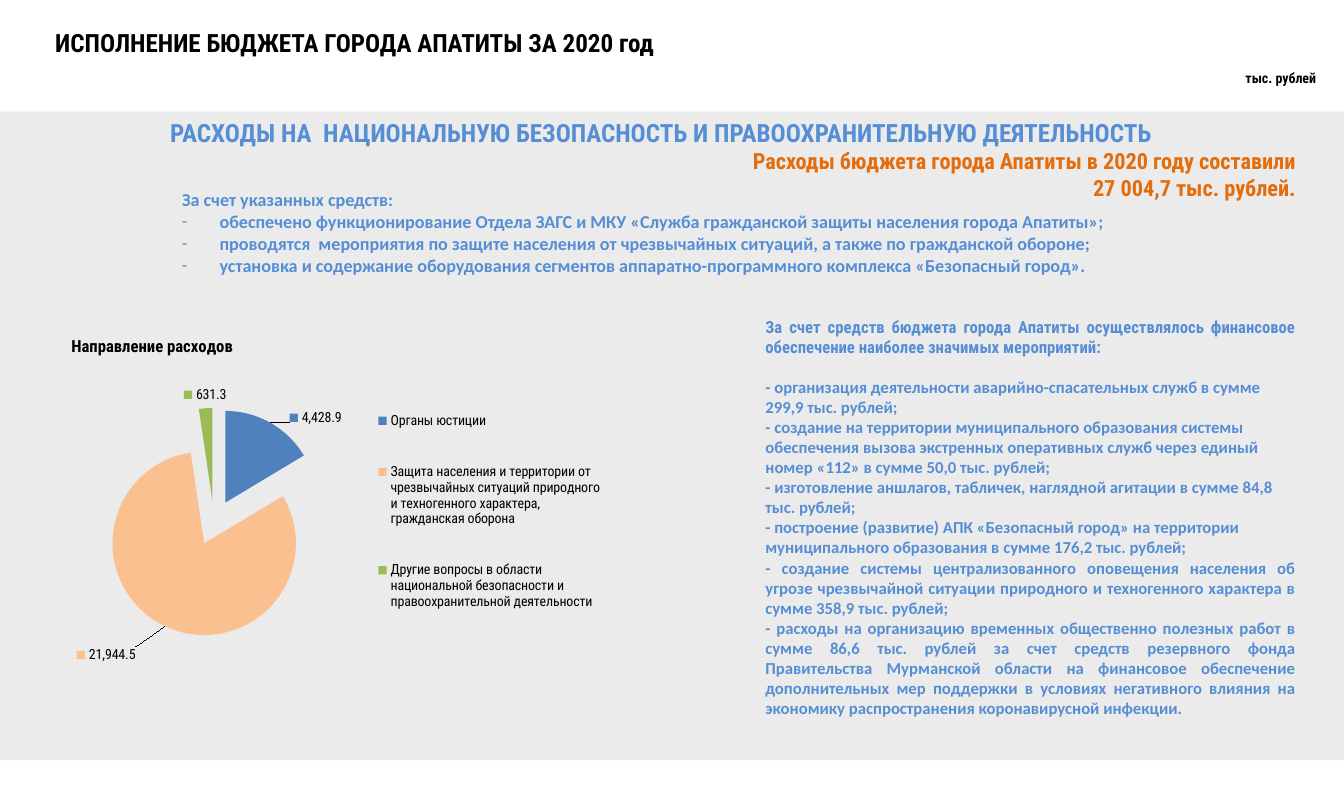
from dataclasses import dataclass
from lxml.etree import SubElement
from pptx import Presentation
from pptx.chart.data import CategoryChartData
from pptx.dml.color import RGBColor as RGB
from pptx.enum.chart import XL_CHART_TYPE as CT, XL_LABEL_POSITION as LP, XL_LEGEND_POSITION as LEG
from pptx.enum.shapes import MSO_SHAPE as SHAPE
from pptx.enum.text import MSO_ANCHOR as ANCHOR, PP_ALIGN as AL
from pptx.oxml import parse_xml
from pptx.oxml.ns import qn
from pptx.util import Pt


@dataclass(frozen=True)
class Theme:
    """Colours, fonts and type sizes of the slide."""
    black: str = "000000"
    blue: str = "558ED5"
    orange: str = "E46C0A"
    panel: str = "EBEBEB"
    slices: tuple = ("4F81BD", "FAC090", "9BBB59")
    head: str = "Roboto Condensed"
    body: str = "Calibri"
    title: int = 18
    total: int = 16
    uses: int = 13
    text: int = 12
    small: int = 10


T = Theme()
CHART_NS = "http://schemas.openxmlformats.org/drawingml/2006/chart"
NUMBER = "#,##0.0"
EXPLOSION = 25

USES = [
    "обеспечено функционирование Отдела ЗАГС и МКУ «Служба гражданской защиты населения города Апатиты»;",
    "проводятся  мероприятия по защите населения от чрезвычайных ситуаций, а также по гражданской обороне;",
    "установка и содержание оборудования сегментов аппаратно-программного комплекса «Безопасный город».",
]
SPENDING = [
    ("Органы юстиции", 4428.9),
    ("Защита населения и территории от чрезвычайных ситуаций природного и техногенного характера, "
     "гражданская оборона", 21944.5),
    ("Другие вопросы в области национальной безопасности и правоохранительной деятельности", 631.3),
]
MEASURES = [
    ("- организация деятельности аварийно-спасательных служб в сумме 299,9 тыс. рублей;", AL.LEFT),
    ("- создание на территории муниципального образования системы обеспечения вызова экстренных "
     "оперативных служб через единый номер «112» в сумме 50,0 тыс. рублей;", AL.LEFT),
    ("- изготовление аншлагов, табличек, наглядной агитации в сумме 84,8 тыс. рублей;", AL.LEFT),
    ("- построение (развитие) АПК «Безопасный город» на территории муниципального образования "
     "в сумме 176,2 тыс. рублей;", AL.LEFT),
    ("- создание системы централизованного оповещения населения об угрозе чрезвычайной ситуации "
     "природного и техногенного характера в сумме 358,9 тыс. рублей;", AL.JUSTIFY),
    ("- расходы на организацию временных общественно полезных работ в сумме 86,6 тыс. рублей за счет "
     "средств резервного фонда Правительства Мурманской области на финансовое обеспечение "
     "дополнительных мер поддержки в условиях негативного влияния на экономику распространения "
     "коронавирусной инфекции.", AL.JUSTIFY),
]


def style(font, name, size, color, bold=True):
    """Set the face, size, colour and weight of a font."""
    font.name, font.size, font.bold = name, Pt(size), bold
    font.color.rgb = RGB.from_string(color)


def add_text(s, box, lines, size, color, name=T.head, align=AL.LEFT, anchor=ANCHOR.TOP):
    """Add a text box with one paragraph per line and return its paragraphs."""
    tf = s.shapes.add_textbox(*map(Pt, box)).text_frame
    tf.word_wrap, tf.vertical_anchor = True, anchor
    tf.margin_left = tf.margin_right = Pt(8.5)
    tf.margin_top = tf.margin_bottom = Pt(4.25)
    tf.text = "\n".join(lines)
    for p in tf.paragraphs:
        p.alignment = align
        for r in p.runs:
            style(r.font, name, size, color)
    return tf.paragraphs


def add_header(s, box):
    """Add the slide title and the unit of measure."""
    x, y, w, h = box
    add_text(s, (x + 31, y + 15.5, 646, 29), ["ИСПОЛНЕНИЕ БЮДЖЕТА ГОРОДА АПАТИТЫ ЗА 2020 год"], T.title, T.black)
    add_text(s, (x + w - 99.5, y + 45.5, 88, 21), ["тыс. рублей"], T.small, T.black, align=AL.RIGHT)


def add_panel(s, box):
    """Add the grey panel with its heading and total."""
    x, y, w, h = box
    sp = s.shapes.add_shape(SHAPE.RECTANGLE, *map(Pt, box))
    sp.shadow.inherit = False
    sp.fill.solid()
    sp.fill.fore_color.rgb = RGB.from_string(T.panel)
    sp.line.fill.background()
    add_text(s, (x + 113.5, y, 752, 52),
             ["РАСХОДЫ НА  НАЦИОНАЛЬНУЮ БЕЗОПАСНОСТЬ И ПРАВООХРАНИТЕЛЬНУЮ ДЕЯТЕЛЬНОСТЬ"], T.title, T.blue)
    add_text(s, (x + 292, y + 29.5, 646, 31),
             ["Расходы бюджета города Апатиты в 2020 году составили", "27 004,7 тыс. рублей."],
             T.total, T.orange, align=AL.RIGHT, anchor=ANCHOR.MIDDLE)


def add_uses(s, box):
    """Add the dashed list of what the money was used for."""
    paragraphs = add_text(s, box, ["За счет указанных средств:", *USES], T.uses, T.blue, T.body, AL.JUSTIFY)
    for p in paragraphs[1:]:
        pPr = p._p.get_or_add_pPr()
        pPr.set("marL", str(Pt(27)))
        pPr.set("indent", str(Pt(-27)))
        SubElement(pPr, qn("a:buFont")).set("typeface", T.body)
        SubElement(pPr, qn("a:buChar")).set("char", "-")


def add_measures(s, box):
    """Add the column of funded measures under its introduction."""
    intro = "За счет средств бюджета города Апатиты осуществлялось финансовое обеспечение наиболее значимых мероприятий:"
    paragraphs = add_text(s, box, [intro, *(text for text, _ in MEASURES)], T.text, T.blue, T.body)
    paragraphs[0].alignment = AL.JUSTIFY
    paragraphs[0].runs[0].font.name = T.head
    paragraphs[1].space_before = Pt(14.4)
    for p, (_, align) in zip(paragraphs[1:], MEASURES):
        p.alignment = align


def set_layout(parent, index, edge=True, inner=False, **fractions):
    """Place a chart part by fractions of the chart area."""
    for old in parent.findall(qn("c:layout")):
        parent.remove(old)
    target = '<c:layoutTarget val="inner"/>' if inner else ""
    modes = '<c:xMode val="edge"/><c:yMode val="edge"/>' if edge else ""
    values = "".join(f'<c:{k} val="{v}"/>' for k, v in fractions.items())
    parent.insert(index, parse_xml(
        f'<c:layout xmlns:c="{CHART_NS}"><c:manualLayout>{target}{modes}{values}</c:manualLayout></c:layout>'))


def add_labels(series):
    """Add value labels with legend keys, two of them moved away from the pie."""
    labels = series.data_labels
    labels.show_value = labels.show_legend_key = True
    labels.number_format, labels.number_format_is_linked = NUMBER, False
    labels.position = LP.OUTSIDE_END
    style(labels.font, T.head, T.small, T.black, False)
    offsets = {0: (0.03, 0.02), 1: (-0.05, 0.04)}
    for i in offsets:
        label = series.points[i].data_label
        style(label.font, T.head, T.small, T.black, False)
        label.position = LP.OUTSIDE_END
    for dLbl, (dx, dy) in zip(labels._element.findall(qn("c:dLbl")), offsets.values()):
        set_layout(dLbl, 1, edge=False, x=dx, y=dy)
        dLbl.insert(2, parse_xml(f'<c:numFmt xmlns:c="{CHART_NS}" formatCode="{NUMBER}" sourceLinked="0"/>'))
        dLbl.find(qn("c:showLegendKey")).set("val", "1")


def add_spending_chart(s, box):
    """Add the exploded pie of spending by direction."""
    data = CategoryChartData(number_format=NUMBER)
    data.categories = [name for name, _ in SPENDING]
    data.add_series("Направление расходов", [value for _, value in SPENDING])
    chart = s.shapes.add_chart(CT.PIE, *map(Pt, box), data).chart
    style(chart.font, T.head, T.small, T.black, False)
    chart.has_title = True
    title = chart.chart_title
    title.text_frame.text = "Направление расходов"
    style(title.text_frame.paragraphs[0].runs[0].font, T.head, T.text, T.black)
    set_layout(title._element, 1, x=0, y=0.05)
    chart.has_legend = True
    legend = chart.legend
    legend.position, legend.include_in_layout = LEG.RIGHT, False
    style(legend.font, T.head, T.small, T.black, False)
    set_layout(legend._element, 1, x=0.57, y=0.17, w=0.42, h=0.7)
    plot = chart.plots[0]
    plot.vary_by_categories = True
    set_layout(plot._element.getparent(), 0, inner=True, x=0.1, y=0.31, w=0.34, h=0.48)
    series = plot.series[0]
    for i, color in enumerate(T.slices):
        fill = series.points[i].format.fill
        fill.solid()
        fill.fore_color.rgb = RGB.from_string(color)
    for dPt in series._element.findall(qn("c:dPt")):
        dPt.find(qn("c:spPr")).addprevious(
            parse_xml(f'<c:explosion xmlns:c="{CHART_NS}" val="{EXPLOSION}"/>'))
    add_labels(series)


def main():
    """Build and save the slide."""
    prs = Presentation()
    prs.slide_width, prs.slide_height = Pt(964), Pt(567)
    s = prs.slides.add_slide(prs.slide_layouts[6])
    add_panel(s, (0, 80, 964, 465))
    add_header(s, (0, 0, 964, 80))
    add_uses(s, (122, 131, 842, 72))
    add_spending_chart(s, (49, 224, 387, 274))
    add_measures(s, (540.5, 222.5, 397.5, 329))
    prs.save("out.pptx")


if __name__ == "__main__":
    main()
